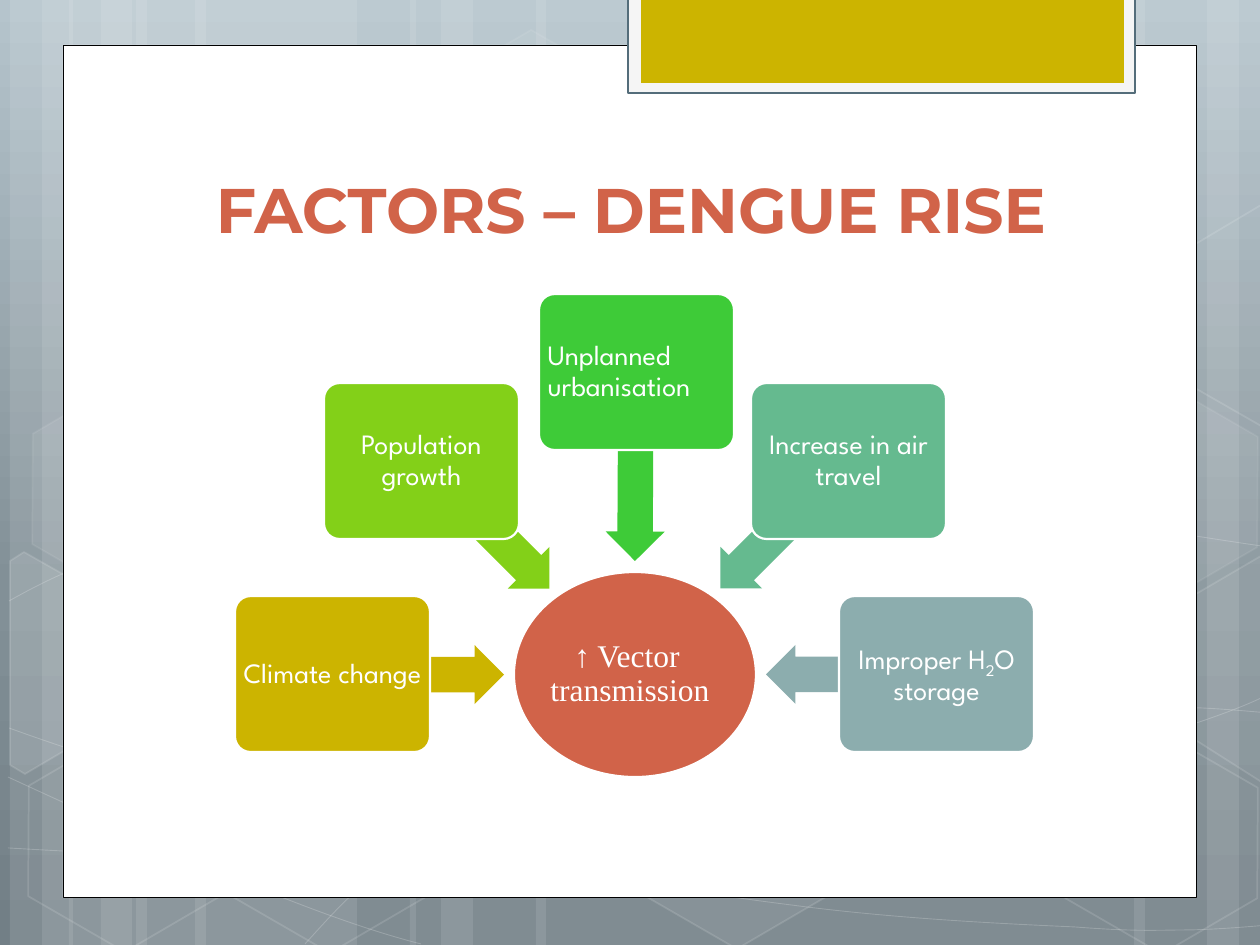
import copy

import pptx
import pptx.dml.color
import pptx.enum.shapes
import pptx.enum.text
import pptx.oxml
import pptx.oxml.ns
import pptx.util

PX = 914400 / 126
SHAPE = pptx.enum.shapes.MSO_SHAPE
ALIGN = pptx.enum.text.PP_ALIGN
ANCHOR = pptx.enum.text.MSO_ANCHOR
qn = pptx.oxml.ns.qn

GRADIENT = [(0, "B5C4CC"), (0.62, "829097"), (1, "727F86")]
BANDS = [(136, 221), (10, 63), (42, 105), (195, 221), (69, 63), (101, 105),
         (924, 221), (1207, 63), (1134, 105), (536, 388), (410, 63), (441, 105)]
CURVES = [
    [(8, 848), (77, 852), (145, 856), (239, 854), (334, 853), (451, 851), (577, 838),
     (703, 825), (882, 802), (998, 777), (1113, 752), (1231, 715), (1269, 694)],
    [(9, 601), (45, 581), (82, 562), (152, 543), (224, 522), (326, 496), (437, 488),
     (549, 479), (685, 478), (824, 488), (963, 496), (1193, 537), (1269, 547)],
    [(8, 777), (160, 847), (311, 916), (421, 944)],
    [(9, 728), (48, 742), (88, 756), (161, 776), (234, 795), (344, 827), (450, 848),
     (554, 869), (687, 892), (791, 905), (896, 919), (1008, 924), (1075, 927),
     (1140, 932), (1158, 930), (1191, 930), (1223, 929), (1246, 927), (1269, 925)],
    [(305, 944), (328, 919), (350, 893), (381, 871), (411, 848), (454, 823), (489, 805),
     (524, 788), (546, 780), (592, 767), (638, 755), (722, 737), (766, 728),
     (811, 720), (818, 719), (857, 717), (895, 713), (958, 709), (1000, 708),
     (1045, 707), (1116, 708), (1116, 708), (1144, 708), (1173, 708), (1201, 708),
     (1223, 709), (1245, 711), (1268, 713)],
]
HEXAGONS = [(421, 45, 4, 8), (626, 742, 6, 12), (14, 745, 0, 12), (18, 393, 7, 8),
            (219, 746, 0, 12), (949, 571, 10, 12), (1051, 747, 0, 12), (1051, 396, 7, 8)]
CUT_HEXAGONS = [
    ([(10, 561), (24, 552), (121, 607), (120, 718), (25, 774), (10, 765)], 10),
    ([(1167, 611), (1261, 556), (1271, 562), (1271, 777), (1263, 783), (1167, 722)], 4),
    ([(1167, 261), (1261, 205), (1273, 212), (1271, 422), (1263, 427), (1167, 372)], 0),
]
FACTORS = [
    ("CCB400", (9, 302), (107, 351, 171), 180, ALIGN.CENTER, ["Climate change"]),
    ("83D018", (98, 89), (169, 201, 181), 225, ALIGN.CENTER, ["Population growth"]),
    ("3ECB38", (313, 0), (315, 143, 189), 270.3, ALIGN.LEFT, ["Unplanned urbanisation"]),
    ("65BA8F", (525, 89), (468, 201, 181), 315, ALIGN.CENTER, ["Increase in air travel"]),
    ("8CADAE", (613, 302), (540, 351, 171), 0, ALIGN.CENTER,
     ["Improper H", "2", "O storage"]),
]


def px(n):
    return pptx.util.Emu(round(n * PX))


def rgb(color):
    return pptx.dml.color.RGBColor.from_string(color)


def paint(fill, color, alpha=100):
    if color is None or alpha == 0:
        fill.background()
        return
    fill.solid()
    fill.fore_color.rgb = rgb(color)
    if alpha < 100:
        clr = fill._xPr.find(qn("a:solidFill"))[0]
        clr.append(pptx.oxml.parse_xml(
            f'<a:alpha {pptx.oxml.ns.nsdecls("a")} val="{alpha * 1000}"/>'))


def style(sp, fill=None, alpha=100, line=None, width=1, line_alpha=100):
    sp.shadow.inherit = False
    paint(sp.fill, fill, alpha)
    paint(sp.line.fill, line, line_alpha)
    if line:
        sp.line.width = pptx.util.Pt(width)
    return sp


def add_shape(s, kind, x, y, w, h, **look):
    return style(s.shapes.add_shape(kind, px(x), px(y), px(w), px(h)), **look)


def add_outline(s, box, points, close, **look):
    builder = s.shapes.build_freeform(*points[0], scale=PX)
    builder.add_line_segments(points[1:], close=close)
    return style(builder.convert_to_shape(px(box[0]), px(box[1])), **look)


def bend(sp):
    lines = sp._element.findall(".//" + qn("a:lnTo"))
    for first, second, end in zip(lines[::3], lines[1::3], lines[2::3]):
        curve = pptx.oxml.parse_xml(f'<a:cubicBezTo {pptx.oxml.ns.nsdecls("a")}/>')
        first.addprevious(curve)
        for line in (first, second, end):
            curve.append(line[0])
            line.getparent().remove(line)


def write(sp, runs, font, size, color, align, anchor, inset, bold=False):
    tf = sp.text_frame
    tf.word_wrap = True
    tf.vertical_anchor = anchor
    tf.margin_left = tf.margin_right = tf.margin_top = tf.margin_bottom = px(inset)
    p = tf.paragraphs[0]
    p.alignment = align
    p.font.name, p.font.size, p.font.bold = font, pptx.util.Pt(size), bold
    p.font.color.rgb = rgb(color)
    for text in runs:
        r = p.add_run()
        r.text = text
        if text == "2":
            r.font._element.set("baseline", "-25000")
    return p


def add_backdrop(s, box):
    x, y, w, h = box
    fill = s.background.fill
    fill.gradient()
    fill.gradient_angle = 270
    stops = s._element.find(".//" + qn("a:gsLst"))
    stops.append(copy.deepcopy(stops[0]))
    for stop, (position, color) in zip(fill.gradient_stops, GRADIENT):
        stop.position = position
        stop.color.rgb = rgb(color)
    for left, width in BANDS:
        add_shape(s, SHAPE.RECTANGLE, x + left, y, width, h, fill="FFFFFF", alpha=10)
    for curve in CURVES:
        bend(add_outline(s, box, curve, False, line="FFFFFF", width=0.5, line_alpha=20))
    for left, top, alpha, line_alpha in HEXAGONS:
        sp = add_shape(s, SHAPE.HEXAGON, x + left, y + top, 221, 192, fill="FFFFFF",
                       alpha=alpha, line="FFFFFF", line_alpha=line_alpha)
        sp.adjustments[0] = 0.285
        sp.rotation = 30
    for points, alpha in CUT_HEXAGONS:
        add_outline(s, box, points, True, fill="FFFFFF", alpha=alpha,
                    line="FFFFFF", line_alpha=12)


def add_panel(s, box):
    x, y, w, h = box
    add_shape(s, SHAPE.RECTANGLE, x, y, w, h, fill="FFFFFF", line="000000", width=0.5)
    add_shape(s, SHAPE.RECTANGLE, x + 565, y - 47, 507, 95,
              fill="F5F5F5", line="546D7A", width=1.25)
    add_shape(s, SHAPE.RECTANGLE, x + 578, y - 47, 483, 85, fill="CCB400")


def add_title(s, box):
    sp = s.shapes.add_textbox(*map(px, box))
    write(sp, ["FACTORS – DENGUE RISE"], "Montserrat", 36, "D16349",
          ALIGN.CENTER, ANCHOR.BOTTOM, 6, bold=True)


def add_diagram(s, box):
    x, y, w, h = box
    sp = add_shape(s, SHAPE.OVAL, x + 288, y + 278, 242, 205,
                   fill="D16349", line="FFFFFF", width=1.25)
    p = write(sp, ["↑ Vector transmission"], "Times New Roman", 18, "FFFFFF",
              ALIGN.LEFT, ANCHOR.MIDDLE, 1)
    p.line_spacing = 0.9
    p._p.get_or_add_pPr().set("indent", str(px(24)))
    for color, card, arrow, angle, align, runs in FACTORS:
        left, top, length = arrow
        sp = add_shape(s, SHAPE.LEFT_ARROW, x + left, y + top, length, 59, fill=color)
        sp.adjustments[0] = 0.6
        sp.rotation = angle
        sp = add_shape(s, SHAPE.ROUNDED_RECTANGLE, x + card[0], y + card[1], 195, 156,
                       fill=color, line="FFFFFF", width=1.25)
        sp.adjustments[0] = 0.1
        p = write(sp, runs, "League Spartan", 16, "FFFFFF", align, ANCHOR.MIDDLE, 4)
        p.line_spacing = 0.9


def main():
    prs = pptx.Presentation()
    prs.slide_width, prs.slide_height = px(1260), px(945)
    s = prs.slides.add_slide(prs.slide_layouts[6])
    add_backdrop(s, (0, 0, 1260, 945))
    add_panel(s, (63, 45, 1134, 853))
    add_title(s, (147, 95, 968, 157))
    add_diagram(s, (226, 294, 818, 483))
    prs.save("out.pptx")


if __name__ == "__main__":
    main()
